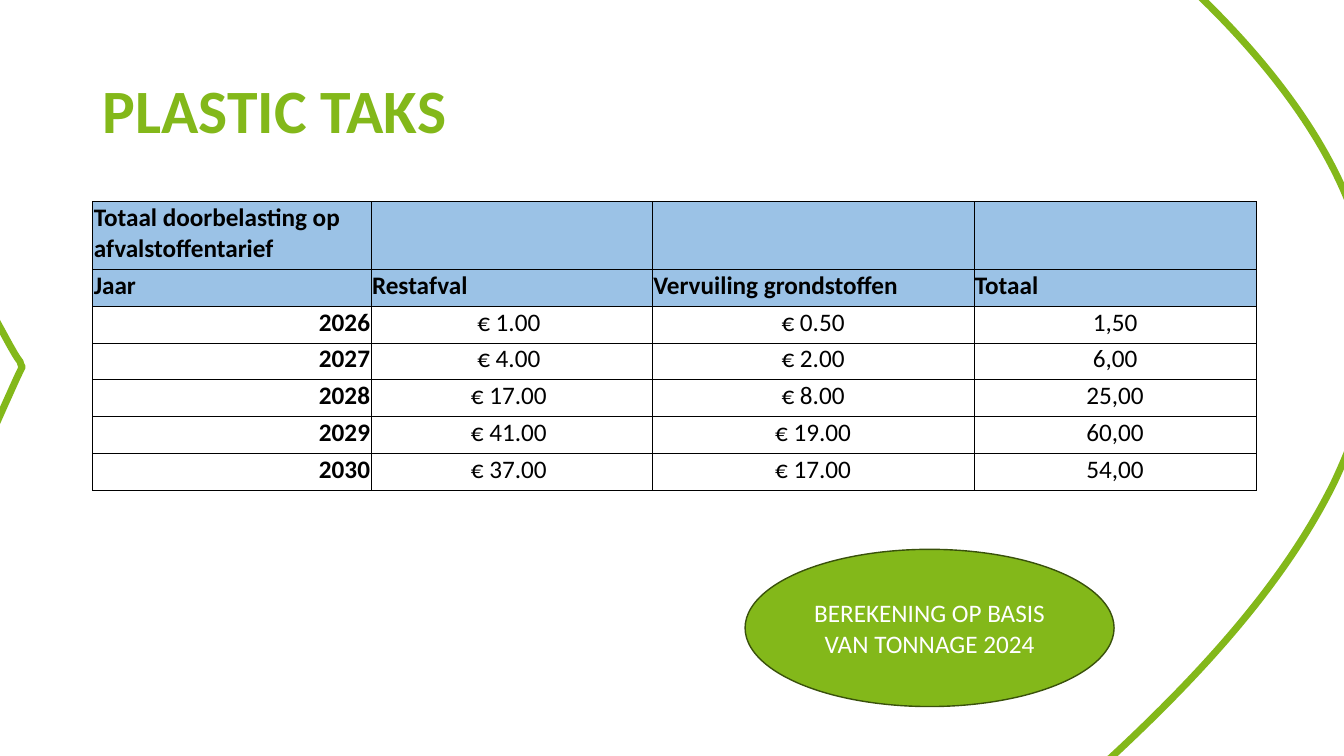
from dataclasses import dataclass
from typing import Optional

from lxml.etree import SubElement
from pptx import Presentation
from pptx.dml.color import RGBColor
from pptx.enum.shapes import MSO_SHAPE as Shape
from pptx.enum.text import MSO_ANCHOR as Anchor, PP_ALIGN as Align
from pptx.oxml.ns import qn
from pptx.util import Inches, Pt


@dataclass(frozen=True)
class Theme:
    font: str = "Calibri"
    green: str = "83B81A"
    dark_green: str = "39510B"
    header_blue: str = "9BC2E6"
    black: str = "000000"
    white: str = "FFFFFF"
    title_size: float = 44
    text_size: float = 18
    band_width: float = 5
    outer_border: float = 1
    inner_border: float = 0.5


@dataclass(frozen=True)
class CellStyle:
    align: Align
    bold: bool
    fill: Optional[str] = None


@dataclass(frozen=True)
class Tariff:
    year: str
    residual: str
    pollution: str
    total: str

    def texts(self) -> list[str]:
        return [self.year, f"€ {self.residual}{NBSP}",
                f"{NBSP}€ {self.pollution}{NBSP}", self.total]


THEME = Theme()
HEADER = CellStyle(Align.LEFT, True, THEME.header_blue)
YEAR = CellStyle(Align.RIGHT, True)
AMOUNT = CellStyle(Align.CENTER, False)
NBSP = chr(160)

COLUMN_WIDTHS = [2.76, 2.79, 3.19, 2.8]
ROW_HEIGHT, TABLE_HEIGHT = 0.36, 2.82
HEADINGS = [
    ["Totaal doorbelasting op afvalstoffentarief", "", "", ""],
    ["Jaar", "Restafval", "Vervuiling grondstoffen", "Totaal"],
]
TARIFFS = [
    Tariff("2026", "1.00", "0.50", "1,50"),
    Tariff("2027", "4.00", "2.00", "6,00"),
    Tariff("2028", "17.00", "8.00", "25,00"),
    Tariff("2029", "41.00", "19.00", "60,00"),
    Tariff("2030", "37.00", "17.00", "54,00"),
]

# Outline of the green band: two numbers are a line end, six a Bézier curve
BAND_BOX = (-4.96, -8.14, 18.58, 23.78)
BAND_START = (-3.06, 15.43)
BAND_SEGMENTS = [
    (-3.07, 15.43, -3.07, 15.43, -3.07, 15.42),
    (-3.32, 15.3, -3.55, 15.12, -3.73, 14.9),
    (-4.11, 14.43, -4.15, 13.96, -4.16, 13.61),
    (-4.12, 12.59, -3.71, 11.87, -3.62, 11.64),
    (-3.61, 11.63),
    (-3.59, 11.59),
    (-3.59, 11.59, -3.01, 10.45, -2.17, 8.72),
    (-1.59, 7.54, -0.9, 6.09, -0.19, 4.54),
    (-0.11, 4.37, -0.03, 4.19, 0.05, 4.01),
    (0.11, 3.88, 0.16, 3.76, 0.22, 3.64),
    (0.21, 3.62, 0.2, 3.61, 0.2, 3.59),
    (0.16, 3.54, 0.13, 3.48, 0.1, 3.43),
    (-0.02, 3.21, -0.14, 2.99, -0.26, 2.78),
    (-1.29, 0.94, -2.28, -0.74, -3.02, -1.98),
    (-3.75, -3.21, -4.23, -3.97, -4.23, -3.97),
    (-4.25, -4.01, -4.47, -4.37, -4.67, -4.86),
    (-4.77, -5.11, -4.87, -5.39, -4.93, -5.73),
    (-4.98, -6.07, -5.01, -6.5, -4.77, -7.03),
    (-4.73, -7.11, -4.68, -7.2, -4.63, -7.26),
    (-4.28, -7.79, -3.65, -8.09, -3.13, -8.13),
    (-2.61, -8.18, -2.15, -8.07, -1.68, -7.92),
    (-0.94, -7.66, 0.52, -7.09, 2.23, -6.27),
    (3.22, -5.8, 4.28, -5.24, 5.32, -4.61),
    (7.55, -3.27, 9.49, -2.06, 10.94, -0.88),
    (11.67, -0.29, 12.28, 0.29, 12.75, 0.92),
    (13.22, 1.55, 13.58, 2.27, 13.62, 3.09),
    (13.62, 3.22, 13.62, 3.31, 13.62, 3.37),
    (13.61, 3.4),
    (13.61, 3.42),
    (13.6, 3.52, 13.6, 3.58, 13.59, 3.62),
    (13.58, 3.72),
    (13.57, 3.76, 13.57, 3.77, 13.56, 3.78),
    (13.56, 3.82),
    (13.56, 3.84),
    (13.5, 4.16, 13.38, 4.47, 13.23, 4.79),
    (12.79, 5.68, 12.05, 6.58, 10.85, 7.67),
    (10.65, 7.86, 10.43, 8.04, 10.21, 8.23),
    (9.21, 9.05, 8.21, 9.82, 7.43, 10.4),
    (7.04, 10.69, 6.65, 10.97, 6.25, 11.25),
    (6.08, 11.37, 5.99, 11.44, 5.99, 11.44),
    (5.99, 11.45),
    (5.98, 11.45),
    (3.26, 13.4, 0.39, 14.82, -0.74, 15.32),
    (-1.41, 15.6, -2.17, 15.82, -3.06, 15.43),
]


def color(value: str) -> RGBColor:
    return RGBColor.from_string(value)


def add_text(frame, text: str, size: float, ink: str, align: Align, bold: bool = False) -> None:
    paragraph = frame.paragraphs[0]
    paragraph.alignment = align
    run = paragraph.add_run()
    run.text = text
    run.font.name = THEME.font
    run.font.size = Pt(size)
    run.font.bold = bold
    run.font.color.rgb = color(ink)


def add_band(slide) -> None:
    left, top, width, height = BAND_BOX
    builder = slide.shapes.build_freeform(Inches(BAND_START[0]), Inches(BAND_START[1]))
    builder.add_line_segments([(Inches(s[-2]), Inches(s[-1])) for s in BAND_SEGMENTS])
    band = builder.convert_to_shape()
    band.left, band.top = Inches(left), Inches(top)
    band.width, band.height = Inches(width), Inches(height)
    # Curves need XML: redraw the outline within the band's box
    outline = next(band._element.iter(qn("a:path")))
    outline.set("w", str(Inches(width)))
    outline.set("h", str(Inches(height)))
    for step in list(outline):
        outline.remove(step)
    for tag, numbers in [("a:moveTo", BAND_START)] + [
            ("a:lnTo" if len(s) == 2 else "a:cubicBezTo", s) for s in BAND_SEGMENTS]:
        step = SubElement(outline, qn(tag))
        for x, y in zip(numbers[::2], numbers[1::2]):
            SubElement(step, qn("a:pt"), x=str(Inches(x - left)), y=str(Inches(y - top)))
    SubElement(outline, qn("a:close"))
    band.shadow.inherit = False
    band.fill.background()
    band.line.color.rgb = color(THEME.green)
    band.line.width = Pt(THEME.band_width)


def set_border(cell, side: str, width: float) -> None:
    line = SubElement(cell._tc.get_or_add_tcPr(), qn(f"a:ln{side}"), w=str(Pt(width)))
    SubElement(SubElement(line, qn("a:solidFill")), qn("a:srgbClr"), val=THEME.black)


def format_cell(cell, text: str, style: CellStyle, outer_sides: dict[str, bool]) -> None:
    for side, is_outer in outer_sides.items():
        set_border(cell, side, THEME.outer_border if is_outer else THEME.inner_border)
    if style.fill:
        cell.fill.solid()
        cell.fill.fore_color.rgb = color(style.fill)
    else:
        cell.fill.background()
    cell.vertical_anchor = Anchor.BOTTOM
    cell.margin_left = cell.margin_right = cell.margin_top = Inches(0.01)
    cell.margin_bottom = Inches(0.05)
    if text:
        add_text(cell.text_frame, text, THEME.text_size, THEME.black, style.align, style.bold)


def add_tariff_table(slide) -> None:
    rows = HEADINGS + [tariff.texts() for tariff in TARIFFS]
    last_row, last_column = len(rows) - 1, len(COLUMN_WIDTHS) - 1
    frame = slide.shapes.add_table(
        len(rows), len(COLUMN_WIDTHS), Inches(0.92), Inches(2),
        Inches(sum(COLUMN_WIDTHS)), Inches(TABLE_HEIGHT))
    table = frame.table
    table.first_row = table.horz_banding = False
    for column, width in zip(table.columns, COLUMN_WIDTHS):
        column.width = Inches(width)
    for row in table.rows:
        row.height = Inches(ROW_HEIGHT)
    frame.height = Inches(TABLE_HEIGHT)
    for r, texts in enumerate(rows):
        for c, text in enumerate(texts):
            style = HEADER if r < len(HEADINGS) else YEAR if c == 0 else AMOUNT
            outer_sides = {"L": c == 0, "R": c == last_column, "T": r == 0, "B": r == last_row}
            format_cell(table.cell(r, c), text, style, outer_sides)


def add_heading(slide) -> None:
    heading = slide.shapes.title
    heading.left, heading.top = Inches(0.92), Inches(0.4)
    heading.width, heading.height = Inches(11.5), Inches(1.45)
    heading.text_frame.vertical_anchor = Anchor.MIDDLE
    heading.text_frame.paragraphs[0].line_spacing = 0.9
    add_text(heading.text_frame, "PLASTIC TAKS", THEME.title_size, THEME.green, Align.LEFT, True)


def add_basis_note(slide) -> None:
    basis = slide.shapes.add_shape(
        Shape.OVAL, Inches(7.39), Inches(5.45), Inches(3.66), Inches(1.56))
    basis.shadow.inherit = False
    basis.fill.solid()
    basis.fill.fore_color.rgb = color(THEME.green)
    basis.line.color.rgb = color(THEME.dark_green)
    basis.line.width = Pt(1)
    basis.text_frame.word_wrap = True
    basis.text_frame.vertical_anchor = Anchor.MIDDLE
    add_text(basis.text_frame, "BEREKENING OP BASIS VAN TONNAGE 2024",
             THEME.text_size, THEME.white, Align.CENTER)


# Slide
deck = Presentation()
deck.slide_width, deck.slide_height = Inches(13.33), Inches(7.5)
tax_slide = deck.slides.add_slide(deck.slide_layouts[5])
for add_part in (add_band, add_heading, add_tariff_table, add_basis_note):
    add_part(tax_slide)
deck.save("out.pptx")
